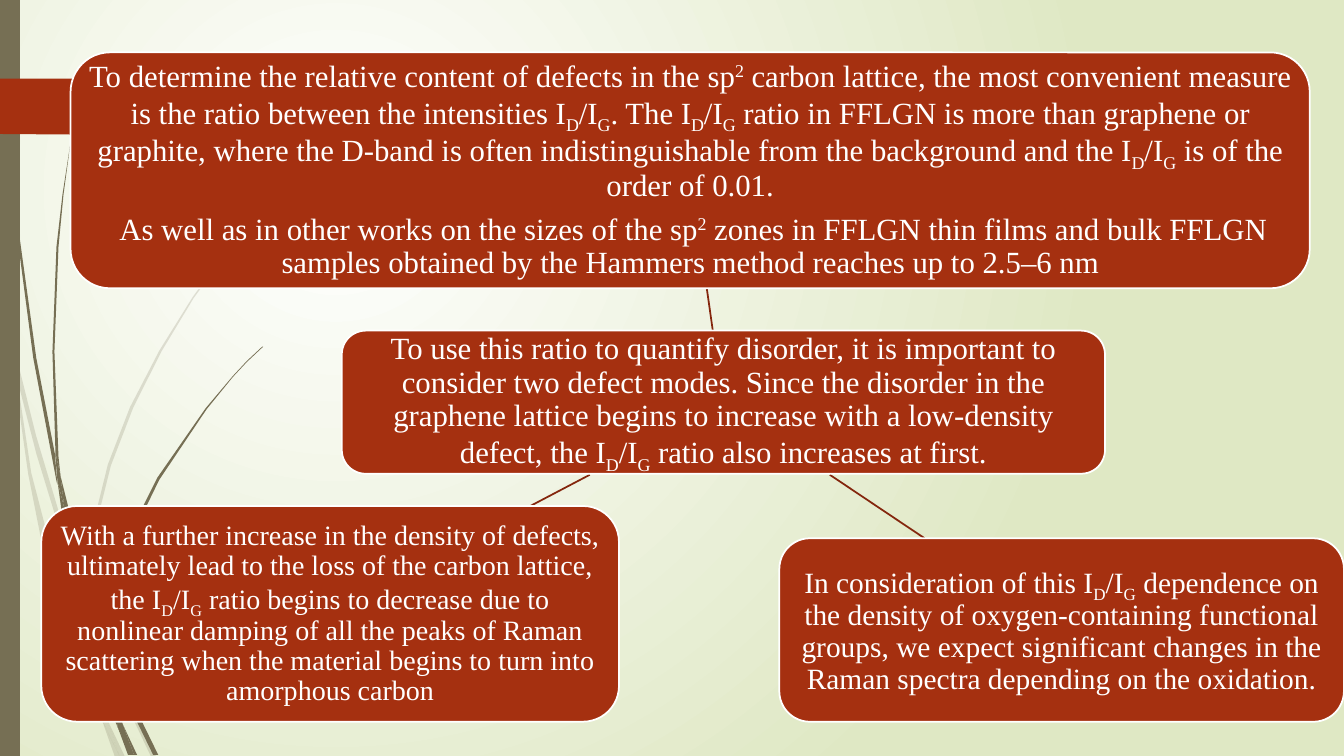
from lxml import etree
from pptx import Presentation, util as u
from pptx.dml.color import RGBColor
from pptx.enum import shapes, text
from pptx.oxml.ns import qn

COLORS = {"stem": "766F54", "rust": "A53010", "link": "84260D",
          "white": "FFFFFF", "pale green": "DFE8C4"}
BASELINES = {"_": "-25000", "^": "30000"}


def rgb(name):
    return RGBColor.from_string(COLORS[name])


def write(frame, paragraphs, size, font="Times New Roman", color="white"):
    """Fill a frame; pieces between bars starting with _ or ^ are sub- or superscript."""
    for index, content in enumerate(paragraphs):
        paragraph = frame.paragraphs[0] if index == 0 else frame.add_paragraph()
        paragraph.alignment = text.PP_ALIGN.CENTER
        paragraph.line_spacing = 0.9
        paragraph.space_after = u.Pt(round(0.35 * size, 1))
        for piece in content.split("|"):
            run = paragraph.add_run()
            run.text = piece.lstrip("_^")
            run.font.size = u.Pt(size)
            run.font.name = font
            run.font.color.rgb = rgb(color)
            if piece[0] in BASELINES:
                run._r.get_or_add_rPr().set("baseline", BASELINES[piece[0]])


presentation = Presentation()
presentation.slide_width, presentation.slide_height = u.Inches(13.33), u.Inches(7.5)
slide = presentation.slides.add_slide(presentation.slide_layouts[6])

# Background: radial glow centred in the upper left
background = slide.background.fill
background.gradient()
for stop, position, name in zip(background.gradient_stops, (0, 1), ("white", "pale green")):
    stop.position = position
    stop.color.rgb = rgb(name)
gradient = slide.element.find(".//" + qn("a:gradFill"))
gradient.remove(gradient.find(qn("a:lin")))
glow = etree.SubElement(gradient, qn("a:path"), {"path": "circle"})
etree.SubElement(glow, qn("a:fillToRect"), l="50000", t="50000", r="100000", b="100000")

# Outlines in hundredths of an inch
faint_blades = [
    [(11, 350), (9, 322), (0, 282), (0, 299), (10, 344)],
    [(58, 522), (84, 599), (85, 586), (62, 520), (36, 433), (14, 345), (17, 376), (36, 450)],
    [(92, 607), (88, 596), (88, 610), (123, 694), (150, 751), (155, 751), (127, 692)],
    [(119, 751), (124, 751), (105, 711)],
    [(93, 683), (70, 619), (31, 469), (17, 376), (11, 350), (28, 470), (43, 546), (65, 621),
     (92, 693), (101, 714), (99, 707)],
    [(88, 584), (95, 522), (110, 462), (132, 405), (160, 349), (192, 296), (229, 245),
     (268, 198), (290, 175), (312, 154), (312, 153), (289, 175), (268, 197), (228, 244),
     (191, 295), (158, 348), (129, 404), (107, 461), (92, 522), (85, 584), (85, 586), (88, 596)],
    [(101, 714), (114, 751), (119, 751)],
    [(96, 692), (93, 683), (99, 707), (101, 714), (119, 751), (105, 711)],
]
dark_blades = [
    [(7, 110), (17, 233), (33, 355), (56, 477), (57, 481), (55, 457), (55, 453), (36, 355),
     (19, 232), (8, 109), (5, 48), (4, 0), (3, 0), (4, 48)],
    [(88, 592), (106, 645), (106, 631), (93, 590), (75, 532), (60, 472), (64, 505)],
    [(113, 649), (110, 641), (111, 656), (132, 708), (152, 749), (157, 749), (136, 706)],
    [(110, 691), (98, 657), (83, 607), (72, 556), (64, 505), (57, 477), (68, 557), (79, 608),
     (93, 659), (111, 708), (117, 722), (116, 717)],
    [(60, 472), (58, 453), (54, 349), (58, 245), (63, 193), (70, 141), (62, 193), (56, 245),
     (52, 349), (55, 449)],
    [(133, 749), (136, 749), (122, 719)],
    [(57, 477), (64, 505), (60, 472), (55, 449), (55, 453)],
    [(111, 633), (115, 592), (125, 552), (140, 513), (158, 476), (205, 406), (231, 374),
     (245, 359), (261, 344), (260, 344), (245, 358), (231, 373), (204, 405), (156, 474),
     (137, 512), (122, 551), (111, 590), (106, 631), (110, 641)],
    [(117, 722), (127, 749), (131, 749)],
    [(106, 645), (110, 691), (116, 706), (122, 719), (121, 716), (111, 656), (109, 651)],
    [(116, 706), (110, 691), (116, 717), (117, 722), (130, 749), (133, 749), (122, 719)],
]
stripe = [(0, 0), (20, 0), (20, 750), (0, 750)]
banner = [(173, 108), (148, 133), (146, 134), (136, 134), (0, 133), (0, 78), (146, 78),
          (148, 79), (173, 104), (174, 106)]

# Grass, side stripe and banner, back to front
groups = [(faint_blades, "stem", 20), (dark_blades + [stripe], "stem", 100),
          ([banner], "rust", 100)]
for outlines, name, opacity in groups:
    for outline in outlines:
        builder = slide.shapes.build_freeform(*outline[0], scale=u.Inches(0.01))
        builder.add_line_segments(outline[1:], close=True)
        shape = builder.convert_to_shape()
        shape.shadow.inherit = False
        shape.fill.solid()
        shape.fill.fore_color.rgb = rgb(name)
        shape.line.fill.background()
        if opacity < 100:
            color = shape._element.spPr.find(".//" + qn("a:srgbClr"))
            etree.SubElement(color, qn("a:alpha"), val=str(opacity * 1000))

# Links from box to box
for ends in [(7.07, 3.28, 7.01, 2.86), (8.23, 4.71, 9.17, 5.34), (5.85, 4.71, 5.26, 5.02)]:
    connector = slide.shapes.add_connector(shapes.MSO_CONNECTOR.STRAIGHT, *map(u.Inches, ends))
    connector.line.color.rgb = rgb("link")
    connector.line.width = u.Pt(1.25)
    etree.SubElement(connector._element.spPr, qn("a:effectLst"))

# Text boxes: place, text size, paragraphs
boxes = [
    ((3.39, 3.28, 7.57, 1.42), 22, [
        "To use this ratio to quantify disorder, it is important to consider two defect modes. "
        "Since the disorder in the graphene lattice begins to increase with a low-density defect, "
        "the I|_D|/I|_G| ratio also increases at first."]),
    ((0.7, 0.52, 12.29, 2.34), 22, [
        "To determine the relative content of defects in the sp|^2| carbon lattice, the most "
        "convenient measure is the ratio between the intensities I|_D|/I|_G|. The I|_D|/I|_G| "
        "ratio in FFLGN is more than graphene or graphite, where the D-band is often "
        "indistinguishable from the background and the I|_D|/I|_G| is of the order of 0.01.",
        " As well as in other works on the sizes of the sp|^2| zones in FFLGN thin films and bulk "
        "FFLGN samples obtained by the Hammers method reaches up to 2.5–6 nm"]),
    ((7.73, 5.34, 5.6, 1.82), 21, [
        "In consideration of this I|_D|/I|_G| dependence on the density of oxygen-containing "
        "functional groups, we expect significant changes in the Raman spectra depending on the "
        "oxidation."]),
    ((0.41, 5.02, 5.73, 2.14), 20, [
        "With a further increase in the density of defects, ultimately lead to the loss of the "
        "carbon lattice, the I|_D|/I|_G| ratio begins to decrease due to nonlinear damping of all "
        "the peaks of Raman scattering when the material begins to turn into amorphous carbon"]),
]
for place, size, paragraphs in boxes:
    box = slide.shapes.add_shape(shapes.MSO_SHAPE.ROUNDED_RECTANGLE, *map(u.Inches, place))
    box.shadow.inherit = False
    box.fill.solid()
    box.fill.fore_color.rgb = rgb("rust")
    box.line.color.rgb = rgb("white")
    box.line.width = u.Pt(1.25)
    frame = box.text_frame
    frame.word_wrap = True
    frame.vertical_anchor = text.MSO_ANCHOR.MIDDLE
    frame.margin_left = frame.margin_right = u.Inches(0.06)
    frame.margin_top = frame.margin_bottom = u.Inches(0.06)
    write(frame, paragraphs, size)

presentation.save("out.pptx")
